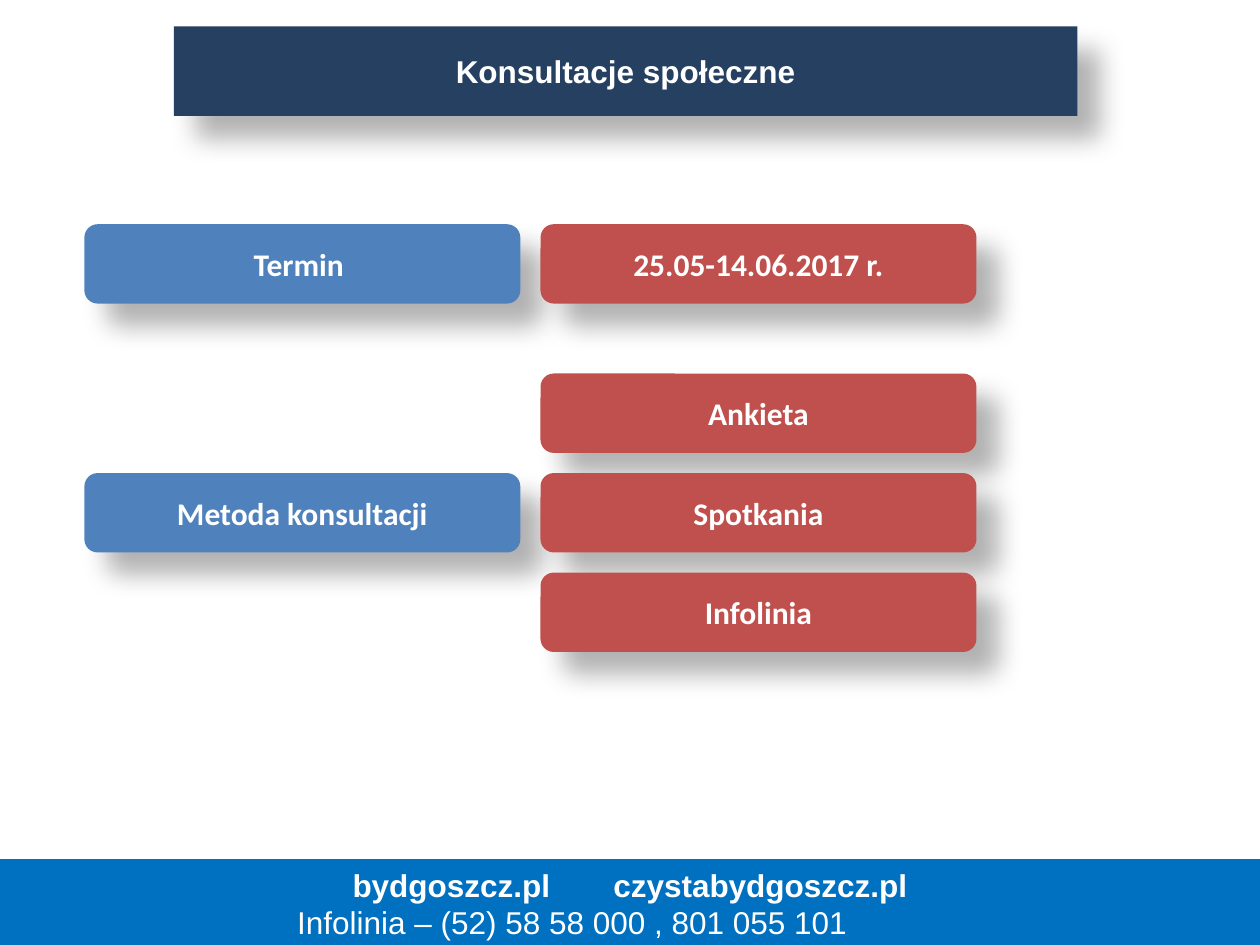
from lxml.etree import SubElement
from pptx import Presentation
from pptx.dml.color import RGBColor
from pptx.enum.shapes import MSO_SHAPE
from pptx.enum.text import MSO_ANCHOR, MSO_AUTO_SIZE, PP_ALIGN
from pptx.oxml.ns import qn
from pptx.util import Inches, Pt

NAVY, BLUE, RED, FOOTER_BLUE, WHITE = "254061", "4F81BD", "C0504D", "0070C0", "FFFFFF"
SLIDE_WIDTH, SLIDE_HEIGHT = 10, 7.5
GRID_LEFT, GRID_TOP = 0.67, 1.78
COLUMN_PITCH, ROW_PITCH = 3.62, 0.79
CARD_WIDTH, CARD_HEIGHT = 3.46, 0.63
CARDS = [
    (0, 0, "Termin ", BLUE),
    (1, 0, "25.05-14.06.2017 r.", RED),
    (0, 2.5, "Metoda konsultacji", BLUE),
    (1, 1.5, "Ankieta", RED),
    (1, 2.5, "Spotkania", RED),
    (1, 3.5, "Infolinia", RED),
]


def color(value):
    """Turn a hex string into a colour."""
    return RGBColor.from_string(value)


def write(paragraph, text, font="Calibri", bold=True, align=PP_ALIGN.CENTER, indent=0):
    """Write one formatted line of text into a paragraph."""
    paragraph.alignment = align
    if indent:
        properties = paragraph._p.get_or_add_pPr()
        properties.set("marL", str(Inches(indent)))
        properties.set("indent", "0")
    run = paragraph.add_run()
    run.text = text
    run.font.name = font
    run.font.size = Pt(18)
    run.font.bold = bold
    run.font.color.rgb = color(WHITE)


def add_shadow(shape):
    """Give a shape a soft shadow towards the lower right."""
    shape.shadow.inherit = False
    effects = shape._element.spPr.find(qn("a:effectLst"))
    shadow = SubElement(effects, qn("a:outerShdw"), blurRad=str(Pt(15)),
                        dist=str(Pt(18)), dir=str(45 * 60000), algn="tl", rotWithShape="0")
    shade = SubElement(shadow, qn("a:srgbClr"), val="000000")
    SubElement(shade, qn("a:alpha"), val="30000")


def style_card(shape, text, fill, font="Calibri"):
    """Fill a rounded card, add its shadow and centre its text."""
    shape.fill.solid()
    shape.fill.fore_color.rgb = color(fill)
    shape.line.fill.background()
    add_shadow(shape)
    frame = shape.text_frame
    frame.word_wrap = True
    frame.auto_size = MSO_AUTO_SIZE.NONE
    frame.vertical_anchor = MSO_ANCHOR.MIDDLE
    write(frame.paragraphs[0], text, font=font)


def place_title(slide, left, top, width, height):
    """Turn the title placeholder into a rounded heading in the given box."""
    title = slide.shapes.title
    title.left, title.top = Inches(left), Inches(top)
    title.width, title.height = Inches(width), Inches(height)
    geometry = SubElement(title._element.spPr, qn("a:prstGeom"), prst="roundRect")
    SubElement(geometry, qn("a:avLst"))
    style_card(title, "Konsultacje społeczne", NAVY, font="Arial")


def place_cards(slide, left, top):
    """Lay the cards on a grid that starts at the given corner."""
    for column, row, text, fill in CARDS:
        card = slide.shapes.add_shape(
            MSO_SHAPE.ROUNDED_RECTANGLE,
            Inches(left + column * COLUMN_PITCH), Inches(top + row * ROW_PITCH),
            Inches(CARD_WIDTH), Inches(CARD_HEIGHT))
        style_card(card, text, fill)


def place_footer(slide, left, top, width, height):
    """Draw the contact band in the given box."""
    band = slide.shapes.add_shape(MSO_SHAPE.RECTANGLE, Inches(left), Inches(top),
                                  Inches(width), Inches(height))
    band.shadow.inherit = False
    band.fill.solid()
    band.fill.fore_color.rgb = color(FOOTER_BLUE)
    band.line.color.rgb = color(FOOTER_BLUE)
    band.line.width = Pt(0.75)
    frame = band.text_frame
    frame.word_wrap = True
    frame.auto_size = MSO_AUTO_SIZE.SHAPE_TO_FIT_TEXT
    frame.vertical_anchor = MSO_ANCHOR.TOP
    write(frame.paragraphs[0], "bydgoszcz.pl \t czystabydgoszcz.pl", font="Arial")
    write(frame.add_paragraph(), "Infolinia – (52) 58 58 000 , 801 055 101", font="Arial",
          bold=False, align=PP_ALIGN.LEFT, indent=2.26)


def main():
    """Build and save the consultation slide."""
    presentation = Presentation()
    presentation.slide_width = Inches(SLIDE_WIDTH)
    presentation.slide_height = Inches(SLIDE_HEIGHT)
    slide = presentation.slides.add_slide(presentation.slide_layouts[5])
    place_title(slide, 1.38, 0.21, 7.17, 0.71)
    place_cards(slide, GRID_LEFT, GRID_TOP)
    place_footer(slide, 0, 6.82, SLIDE_WIDTH, 0.71)
    presentation.save("out.pptx")


if __name__ == "__main__":
    main()
